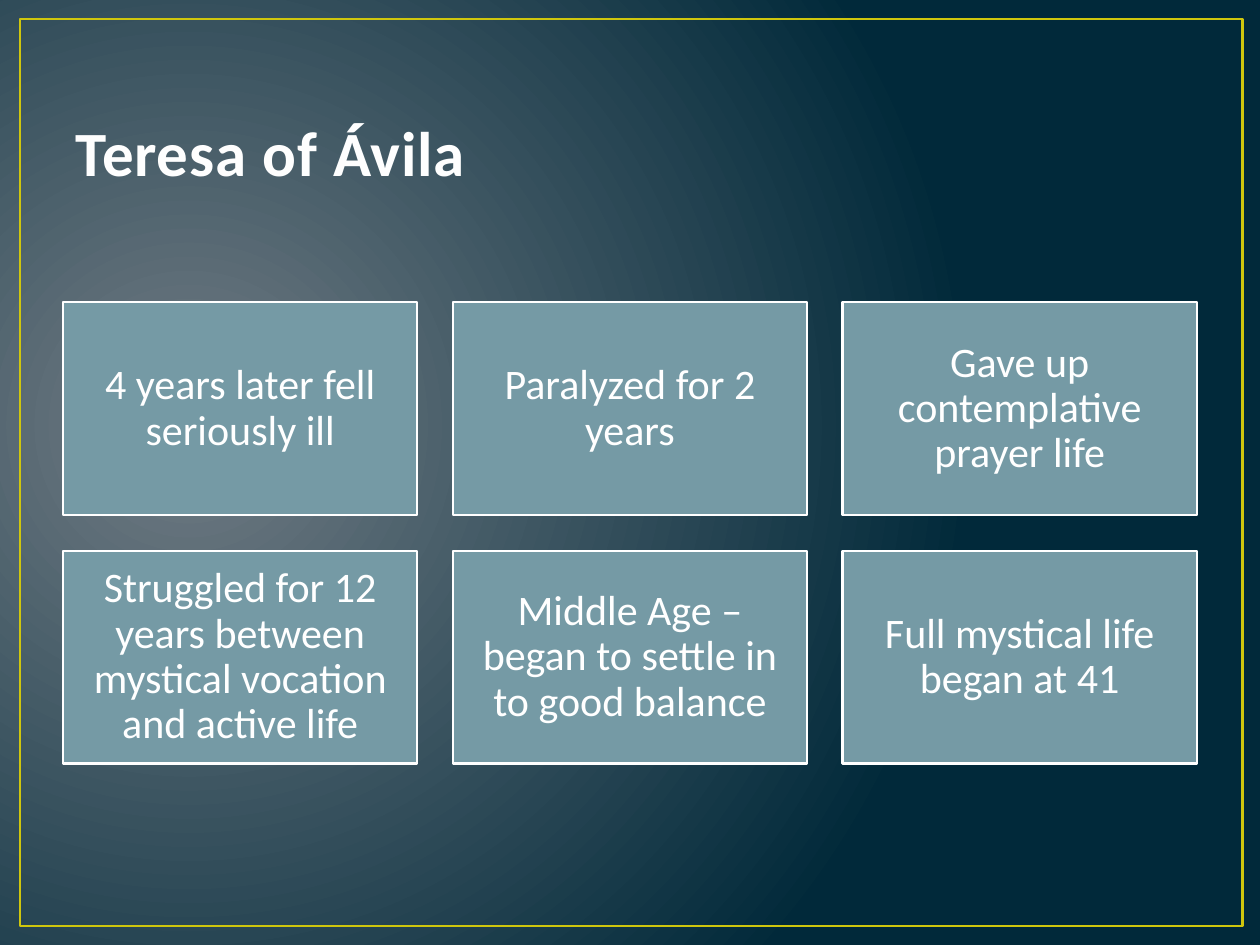
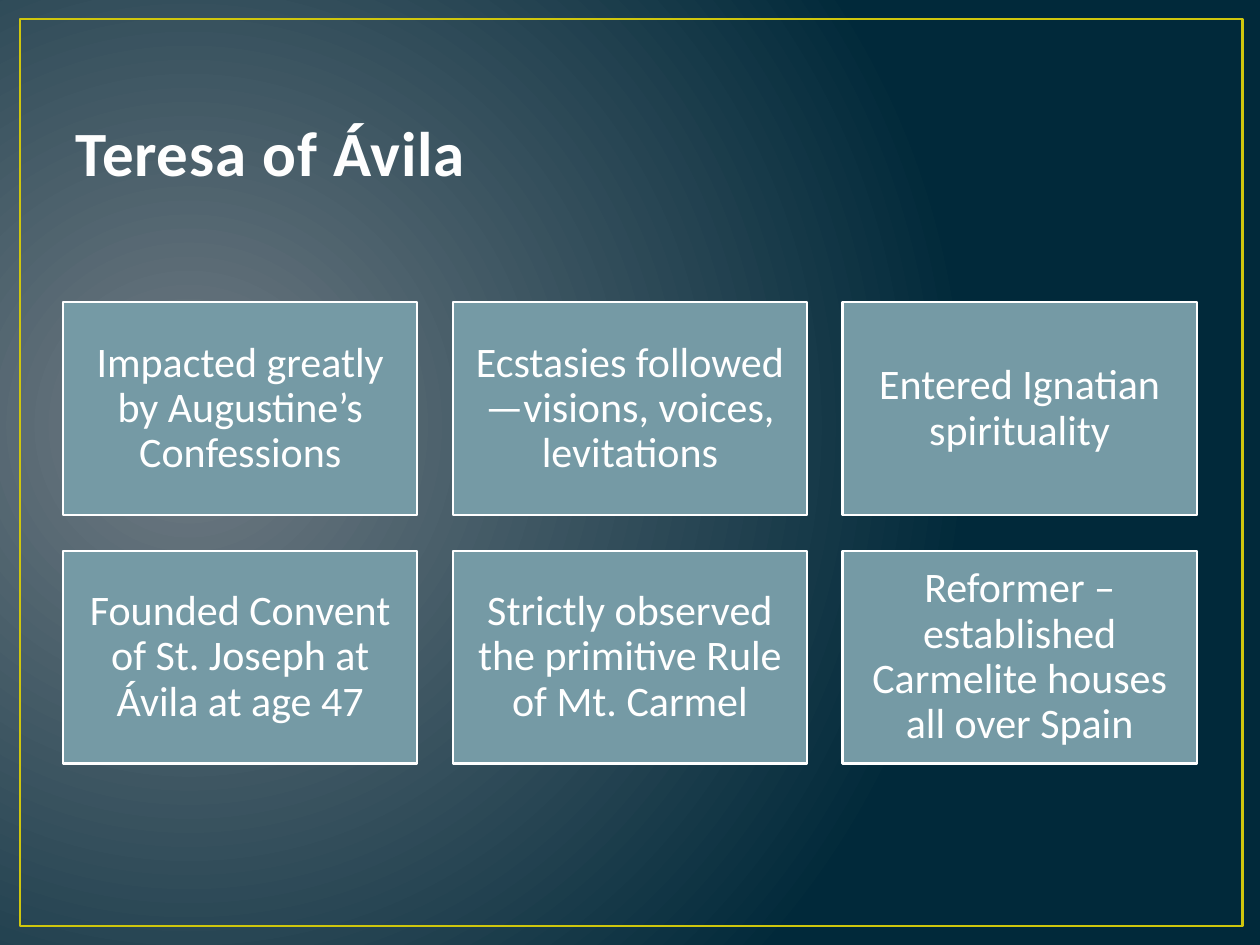
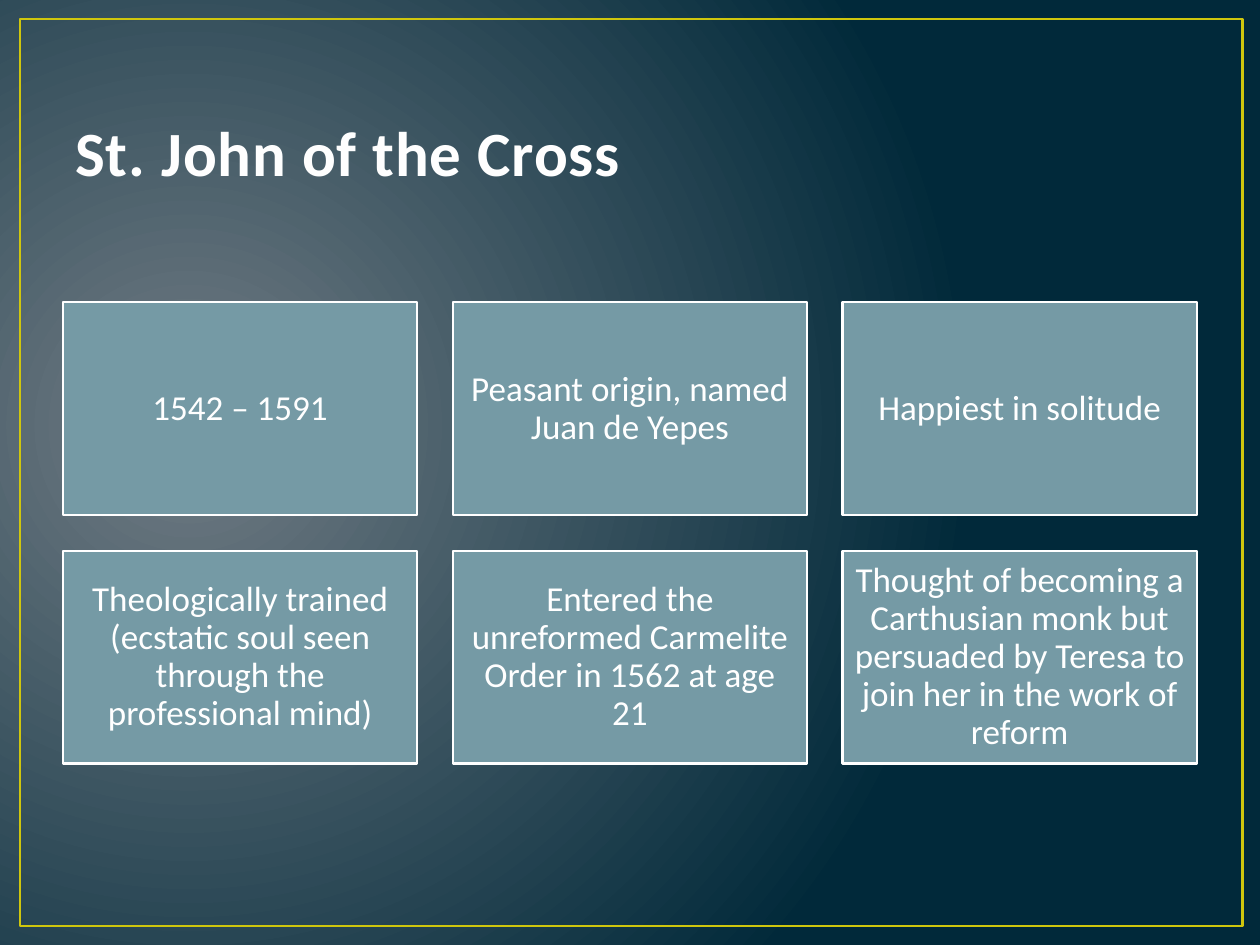
from lxml import etree
from pptx import Presentation
from pptx.dml.color import RGBColor
from pptx.enum import shapes, text
from pptx.oxml import ns, parse_xml
from pptx.util import Inches, Pt

FONT = "Calibri"
GLOW, NIGHT, GOLD = "717C84", "01293A", "CFC60D"
TITLE, TITLE_EDGE = "FEFEFE", "384F55"
CARD, WHITE = "759AA5", "FFFFFF"

FRAME_BOX = (0.16, 0.15, 9.7, 7.2)
TITLE_BOX = (0.5, 0.3, 9, 1.25)
GRID_BOX = (0.5, 2.4, 9, 3.66)
COLUMNS, ROWS, GAP = 3, 2, 0.28

SLIDES = [
    ("Teresa of Ávila", 24, 0.1, [
        "4 years later fell seriously ill",
        "Paralyzed for 2 years",
        "Gave up contemplative prayer life",
        "Struggled for 12 years between mystical vocation and active life",
        "Middle Age – began to settle in to good balance",
        "Full mystical life began at 41",
    ]),
    ("Teresa of Ávila", 24, 0.1, [
        "Impacted greatly by Augustine’s Confessions",
        "Ecstasies followed—visions, voices, levitations",
        "Entered Ignatian spirituality",
        "Founded Convent of St. Joseph at Ávila at age 47",
        "Strictly observed the primitive Rule of Mt. Carmel",
        "Reformer – established Carmelite houses all over Spain",
    ]),
    ("St. John of the Cross", 20, 0.08, [
        "1542 – 1591",
        "Peasant origin, named Juan de Yepes",
        "Happiest in solitude",
        "Theologically trained (ecstatic soul seen through the professional mind)",
        "Entered the unreformed Carmelite Order in 1562 at age 21",
        "Thought of becoming a Carthusian monk but persuaded by Teresa "
        "to join her in the work of reform",
    ]),
]


def color(value):
    return RGBColor.from_string(value)


def add_span(para, words, size, tint):
    span = para.add_run()
    span.text = words
    span.font.name = FONT
    span.font.size = Pt(size)
    span.font.color.rgb = color(tint)
    return span


def add_rectangle(page, box, line, width, fill=None):
    shape = page.shapes.add_shape(
        shapes.MSO_SHAPE.RECTANGLE, *map(Inches, box))
    shape.shadow.inherit = False
    if fill:
        shape.fill.solid()
        shape.fill.fore_color.rgb = color(fill)
    else:
        shape.fill.background()
    shape.line.color.rgb = color(line)
    shape.line.width = Pt(width)
    return shape


def paint_background(page):
    page.background.fill.gradient()
    gradient = next(page.element.iter(ns.qn("a:gradFill")))
    glow = parse_xml(
        f'<a:gradFill {ns.nsdecls("a")} rotWithShape="1"><a:gsLst>'
        f'<a:gs pos="0"><a:srgbClr val="{GLOW}"/></a:gs>'
        f'<a:gs pos="100000"><a:srgbClr val="{NIGHT}"/></a:gs></a:gsLst>'
        '<a:path path="circle">'
        '<a:fillToRect l="15000" t="50000" r="85000" b="60000"/>'
        '</a:path></a:gradFill>')
    gradient.getparent().replace(gradient, glow)


def add_title(page, box, words):
    frame = page.shapes.add_textbox(*map(Inches, box)).text_frame
    frame.word_wrap = True
    frame.vertical_anchor = text.MSO_ANCHOR.BOTTOM
    span = add_span(frame.paragraphs[0], words, 36, TITLE)
    span.font.bold = True
    properties = span.font._element
    properties.set("spc", "50")
    edge = etree.Element(ns.qn("a:ln"), w=str(Pt(1.05)))
    fill = etree.SubElement(edge, ns.qn("a:solidFill"))
    etree.SubElement(fill, ns.qn("a:srgbClr"), val=TITLE_EDGE)
    properties.insert(0, edge)


def add_card(page, box, words, size, inset):
    frame = add_rectangle(page, box, WHITE, 1.25, CARD).text_frame
    frame.word_wrap = True
    frame.vertical_anchor = text.MSO_ANCHOR.MIDDLE
    frame.margin_left = frame.margin_right = Inches(inset)
    frame.margin_top = frame.margin_bottom = Inches(inset)
    para = frame.paragraphs[0]
    para.alignment = text.PP_ALIGN.CENTER
    para.line_spacing = 0.9
    add_span(para, words, size, WHITE)


def add_card_grid(page, box, cards, size, inset):
    left, top, width, height = box
    card_width = (width - GAP * (COLUMNS - 1)) / COLUMNS
    card_height = (height - GAP * (ROWS - 1)) / ROWS
    for index, words in enumerate(cards):
        row, column = divmod(index, COLUMNS)
        card_box = (left + column * (card_width + GAP),
                    top + row * (card_height + GAP),
                    card_width, card_height)
        add_card(page, card_box, words, size, inset)


def add_card_slide(deck, title, size, inset, cards):
    page = deck.slides.add_slide(deck.slide_layouts[6])
    paint_background(page)
    add_rectangle(page, FRAME_BOX, GOLD, 1.5)
    add_title(page, TITLE_BOX, title)
    add_card_grid(page, GRID_BOX, cards, size, inset)


def main():
    deck = Presentation()
    deck.slide_width = Inches(10)
    deck.slide_height = Inches(7.5)
    for content in SLIDES:
        add_card_slide(deck, *content)
    deck.save("out.pptx")


if __name__ == "__main__":
    main()
